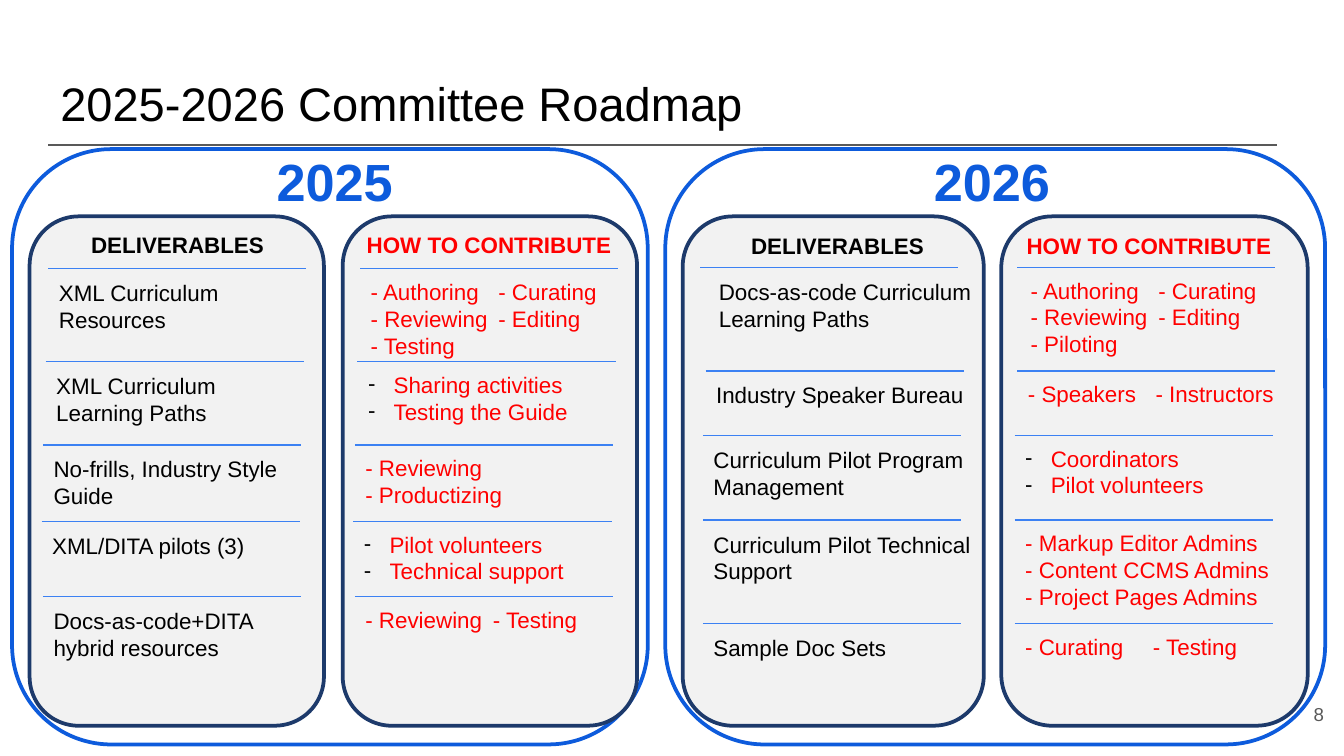
"""Build the 2025-2026 committee roadmap slide."""
from lxml.etree import SubElement
from pptx import Presentation
from pptx.dml.color import RGBColor
from pptx.enum.shapes import MSO_CONNECTOR as Connector, MSO_SHAPE as Shape
from pptx.enum.text import MSO_ANCHOR as Anchor, PP_ALIGN as Align
from pptx.oxml.ns import qn
from pptx.util import Inches, Pt

COLORS = {
    "black": "000000", "red": "FF0000", "year": "0D5BDC", "panel": "F2F2F2",
    "navy": "1D3A6B", "divider": "3C81F3", "gray": "595959",
}
TASK_OFFSET = 2.32
TASK_TAB = 0.95
BULLET_INDENT = 0.19
RULE_WIDTH = 1.92

YEARS = [
    {
        "year": "2025", "frame": (0.09, 4.73), "year_left": 1.96,
        "panels": [(0.22, 2.19), (2.55, 2.19)],
        "headings": (0.58, 2.63), "heading_top": 1.67, "heading_rules": (0.36, 2.68),
        "rows": [
            (0.34, 2.00, "XML Curriculum\nResources", 1.45,
             "- Authoring\t- Curating\n- Reviewing\t- Editing\n- Testing", 1.90),
            (0.32, 2.69, "XML Curriculum\nLearning Paths", 1.51,
             ("Sharing activities", "Testing the Guide"), 1.72),
            (0.30, 3.31, "No-frills, Industry Style\nGuide", 1.88,
             "- Reviewing\n- Productizing", 1.23),
            (0.29, 3.88, "XML/DITA pilots (3)", 1.67,
             ("Pilot volunteers", "Technical support"), 1.71),
            (0.30, 4.44, "Docs-as-code+DITA\nhybrid resources", 1.81,
             "- Reviewing\t- Testing", 1.87),
        ],
    },
    {
        "year": "2026", "frame": (4.95, 4.91), "year_left": 6.85,
        "panels": [(5.08, 2.24), (7.45, 2.28)],
        "headings": (5.49, 7.54), "heading_top": 1.68, "heading_rules": (5.21, 7.57),
        "rows": [
            (5.25, 1.99, "Docs-as-code Curriculum\nLearning Paths", 2.09,
             "- Authoring\t- Curating\n- Reviewing\t- Editing\n- Piloting", 1.90),
            (5.23, 2.76, "Industry Speaker Bureau", 2.06,
             "- Speakers\t- Instructors", 2.04),
            (5.21, 3.24, ("Curriculum Pilot Program", "Management"), 2.08,
             ("Coordinators", "Pilot volunteers"), 1.54),
            (5.21, 3.87, "Curriculum Pilot Technical\nSupport", 2.15,
             "- Markup Editor Admins\n- Content CCMS Admins\n- Project Pages Admins", 2.05),
            (5.21, 4.64, "Sample Doc Sets", 1.50,
             "- Curating\t- Testing", 1.83),
        ],
    },
]


class Roadmap:
    """Hold the style and the current slide."""

    font = "Arial"

    def __init__(self, slide):
        self.slide = slide

    def panel(self, left, top, width, height, line, fill=None):
        panel = self.slide.shapes.add_shape(
            Shape.ROUNDED_RECTANGLE, Inches(left), Inches(top), Inches(width), Inches(height))
        panel.shadow.inherit = False
        if fill:
            panel.fill.solid()
            panel.fill.fore_color.rgb = RGBColor.from_string(COLORS[fill])
        else:
            panel.fill.background()
        panel.line.color.rgb = RGBColor.from_string(COLORS[line])
        panel.line.width = Pt(2)

    def rule(self, left, top, width=RULE_WIDTH, color="divider"):
        rule = self.slide.shapes.add_connector(
            Connector.STRAIGHT, Inches(left), Inches(top), Inches(left + width), Inches(top))
        rule.line.color.rgb = RGBColor.from_string(COLORS[color])
        rule.line.width = Pt(0.75)
        SubElement(rule._element.spPr, qn("a:effectLst"))

    def text(self, left, top, width, height, content, size=12, color="black", bold=False,
             wrap=False, inset=0.05, anchor=Anchor.TOP, align=Align.LEFT, bullets=False):
        box = self.slide.shapes.add_textbox(
            Inches(left), Inches(top), Inches(width), Inches(height))
        frame = box.text_frame
        frame.word_wrap = wrap
        frame.vertical_anchor = anchor
        frame.margin_top = frame.margin_bottom = Inches(inset)
        lines = [content] if isinstance(content, str) else content
        for index, line in enumerate(lines):
            paragraph = frame.add_paragraph() if index else frame.paragraphs[0]
            paragraph.text = line
            paragraph.alignment = align
            if bullets:
                self.bullet(paragraph)
            if "\t" in line:
                self.tab(paragraph)
            paragraph.font.name = self.font
            paragraph.font.size = Pt(size)
            paragraph.font.bold = bold
            paragraph.font.color.rgb = RGBColor.from_string(COLORS[color])

    def bullet(self, paragraph):
        properties = paragraph._p.get_or_add_pPr()
        properties.set("marL", str(Inches(BULLET_INDENT)))
        properties.set("indent", str(-Inches(BULLET_INDENT)))
        bullet_color = SubElement(properties, qn("a:buClr"))
        SubElement(bullet_color, qn("a:srgbClr"), val=COLORS["black"])
        SubElement(properties, qn("a:buFont"), typeface=self.font)
        SubElement(properties, qn("a:buChar"), char="-")

    def tab(self, paragraph):
        stops = SubElement(paragraph._p.get_or_add_pPr(), qn("a:tabLst"))
        SubElement(stops, qn("a:tab"), pos=str(Inches(TASK_TAB)), algn="l")

    def entry(self, left, top, width, content, **style):
        lines = content.count("\n") + 1 if isinstance(content, str) else len(content)
        self.text(left, top, width, 0.1 + 0.2 * lines, content, **style)

    def year(self, plan):
        frame_left, frame_width = plan["frame"]
        self.panel(frame_left, 1.11, frame_width, 4.43, "year")
        for left, width in plan["panels"]:
            self.panel(left, 1.61, width, 3.79, "navy", "panel")
        self.text(plan["year_left"], 1.06, 1.08, 0.57, plan["year"], 28, "year", True)
        deliverables_left, contribute_left = plan["headings"]
        top = plan["heading_top"]
        self.entry(deliverables_left, top, 1.5, "DELIVERABLES", bold=True)
        self.entry(contribute_left, top, 2.05, "HOW TO CONTRIBUTE", color="red", bold=True)
        for index, (left, rule_top, deliverable, width, tasks, task_width) in enumerate(plan["rows"]):
            divider = left + 0.02
            rule_lefts = (divider, divider + TASK_OFFSET) if index else plan["heading_rules"]
            for rule_left in rule_lefts:
                self.rule(rule_left, rule_top)
            self.entry(left, rule_top + 0.03, width, deliverable)
            self.entry(left + TASK_OFFSET, rule_top + 0.02, task_width, tasks,
                       color="red", bullets=isinstance(tasks, tuple))


def main():
    deck = Presentation()
    deck.slide_width = Inches(10)
    deck.slide_height = deck.slide_width * 9 // 16
    roadmap = Roadmap(deck.slides.add_slide(deck.slide_layouts[6]))
    roadmap.text(0.35, 0.45, 9.32, 0.63, "2025-2026 Committee Roadmap", 25.2,
                 wrap=True, inset=0.1, anchor=Anchor.MIDDLE)
    roadmap.rule(0.36, 1.08, 9.14, "gray")
    for plan in YEARS:
        roadmap.year(plan)
    roadmap.text(9.35, 5.1, 0.6, 0.43, "8", 10, "gray", wrap=True, inset=0.1,
                 anchor=Anchor.MIDDLE, align=Align.RIGHT)
    deck.save("out.pptx")


if __name__ == "__main__":
    main()
